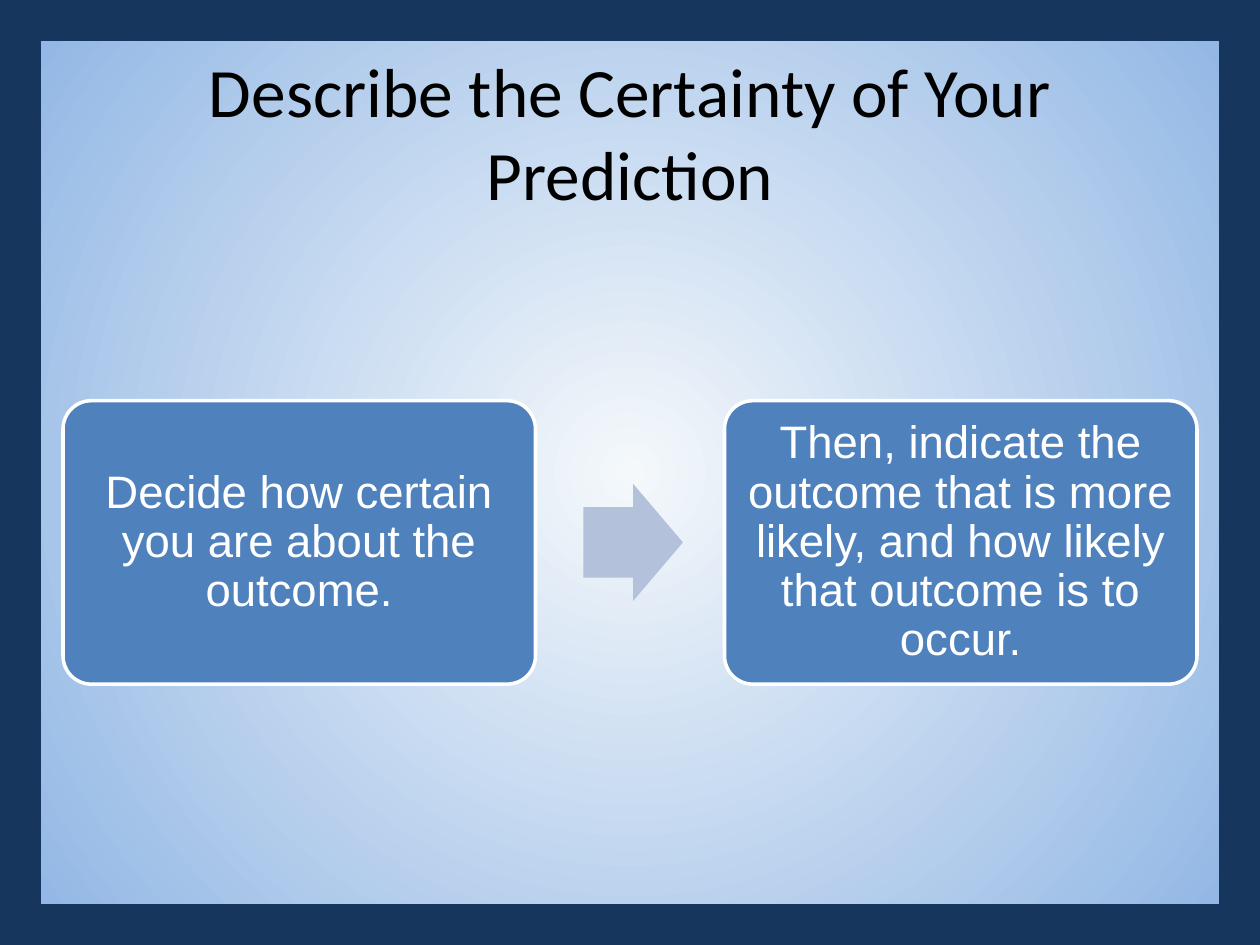
from dataclasses import dataclass

from lxml import etree
from pptx import Presentation
from pptx.dml.color import RGBColor
from pptx.enum.shapes import MSO_SHAPE
from pptx.enum.text import MSO_ANCHOR, MSO_AUTO_SIZE, PP_ALIGN
from pptx.oxml.ns import qn
from pptx.util import Inches, Pt

RECT = MSO_SHAPE.RECTANGLE
ROUNDED = MSO_SHAPE.ROUNDED_RECTANGLE
ARROW = MSO_SHAPE.RIGHT_ARROW
MIDDLE = MSO_ANCHOR.MIDDLE
CENTER = PP_ALIGN.CENTER
NO_AUTOFIT = MSO_AUTO_SIZE.NONE


@dataclass(frozen=True)
class Theme:
    center: str = "F4F8FB"
    edge: str = "8CB3E3"
    frame: str = "17365D"
    box: str = "4F81BD"
    arrow: str = "B3C1DB"
    light: str = "FFFFFF"
    dark: str = "000000"
    title_font: str = "Calibri"
    body_font: str = "Arial"
    title_size: float = 39.6
    body_size: float = 26
    frame_width: float = 47
    box_line: float = 2


class SlideBuilder:
    """Draws styled elements on one slide."""

    def __init__(self, slide, theme):
        self.s = slide
        self.theme = theme

    def background(self):
        fill = self.s.background.fill
        fill.gradient()
        for stop, color in zip(fill.gradient_stops, (self.theme.center, self.theme.edge)):
            stop.color.rgb = RGBColor.from_string(color)
        grad = self.s.background._cSld.find(".//" + qn("a:gradFill"))
        grad.remove(grad.find(qn("a:lin")))
        radial = etree.SubElement(grad, qn("a:path"), {"path": "circle"})
        sides = {side: "50000" for side in "ltrb"}
        etree.SubElement(radial, qn("a:fillToRect"), sides)

    def shape(self, kind, at, fill=None, line=None, width=0, adjustments=()):
        sp = self.s.shapes.add_shape(kind, *map(Inches, at))
        sp.shadow.inherit = False
        if fill:
            sp.fill.solid()
            sp.fill.fore_color.rgb = RGBColor.from_string(fill)
        else:
            sp.fill.background()
        if line:
            sp.line.color.rgb = RGBColor.from_string(line)
            sp.line.width = Pt(width)
        else:
            sp.line.fill.background()
        for i, value in enumerate(adjustments):
            sp.adjustments[i] = value
        return sp

    def text(self, sp, words, font, size, color):
        tf = sp.text_frame
        tf.text = words
        tf.word_wrap = True
        tf.auto_size = NO_AUTOFIT
        tf.vertical_anchor = MIDDLE
        p = tf.paragraphs[0]
        p.alignment = CENTER
        p.font.name = font
        p.font.size = Pt(size)
        p.font.color.rgb = RGBColor.from_string(color)
        return tf

    def frame(self, width, height):
        t = self.theme
        self.shape(RECT, (0, 0, width, height), line=t.frame, width=t.frame_width)

    def title(self, words, at):
        t = self.theme
        sp = self.s.shapes.title
        sp.left, sp.top, sp.width, sp.height = map(Inches, at)
        self.text(sp, words, t.title_font, t.title_size, t.dark)

    def step(self, words, at):
        t = self.theme
        sp = self.shape(ROUNDED, at, t.box, t.light, t.box_line, [0.1])
        tf = self.text(sp, words, t.body_font, t.body_size, t.light)
        tf.margin_left = tf.margin_right = Inches(0.11)
        tf.margin_top = tf.margin_bottom = Inches(0.11)
        tf.paragraphs[0].line_spacing = 0.9

    def arrow(self, at):
        self.shape(ARROW, at, self.theme.arrow, adjustments=[0.6, 0.5])


def main():
    width, height = 10, 7.5
    margin, box_top, box_w, box_h = 0.5, 3.18, 3.75, 2.25
    arrow_w, arrow_h = 0.79, 0.93
    steps = [
        "Decide how certain you are about the outcome.",
        "Then, indicate the outcome that is more likely, "
        "and how likely that outcome is to occur.",
    ]

    prs = Presentation()
    prs.slide_width, prs.slide_height = Inches(width), Inches(height)
    builder = SlideBuilder(prs.slides.add_slide(prs.slide_layouts[5]), Theme())
    builder.background()
    builder.frame(width, height)
    builder.title("Describe the Certainty of Your Prediction", (margin, 0.42, 9, 1.25))
    pitch = width - 2 * margin - box_w
    for i, words in enumerate(steps):
        builder.step(words, (margin + i * pitch, box_top, box_w, box_h))
    arrow_top = box_top + (box_h - arrow_h) / 2
    builder.arrow((4.63, arrow_top, arrow_w, arrow_h))
    prs.save("out.pptx")


if __name__ == "__main__":
    main()
